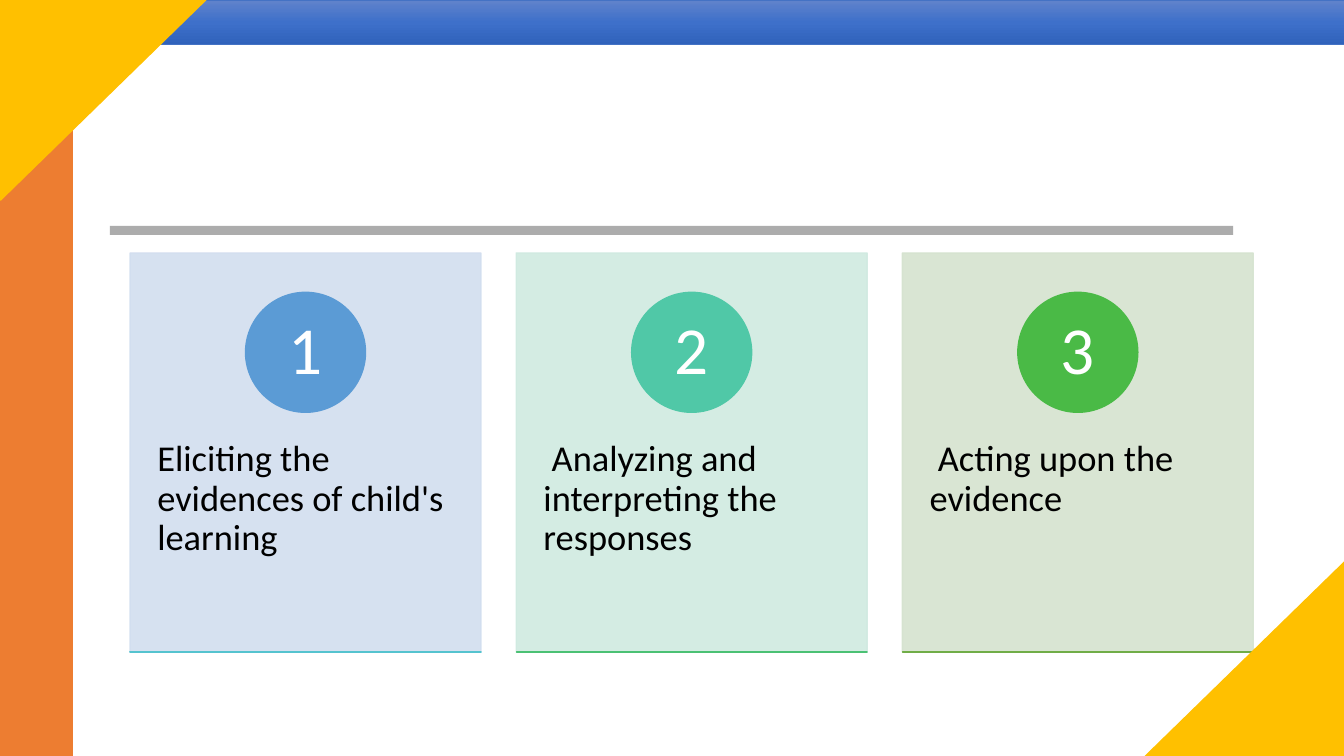
from copy import deepcopy

from pptx import Presentation
from pptx.dml.color import RGBColor
from pptx.enum.shapes import MSO_SHAPE as Shape
from pptx.enum.text import MSO_ANCHOR as Anchor, PP_ALIGN as Align
from pptx.oxml.ns import qn
from pptx.oxml.xmlchemy import OxmlElement
from pptx.util import Inches, Pt

WIDTH, HEIGHT = 13.33, 7.5
FONT = "Calibri"
GOLD, ORANGE = "FFC000", "ED7D31"
BAR_HEIGHT, STRIPE_WIDTH = 0.44, 0.72
CARD_WIDTH, CARD_HEIGHT, CARD_STEP = 3.48, 3.96, 3.83
CIRCLE_SIZE, NUMBER_SIZE = 1.19, 0.84

# Text, card colour, circle colour, base line colour
STEPS = [
    ("Eliciting the evidences of child's learning", "D2DEEF", "5B9BD5", "55C3CF"),
    (" Analyzing and interpreting the responses", "D0EAE1", "50C8A7", "4BC174"),
    (" Acting upon the evidence", "D5E3CF", "4ABA46", "70AD47"),
]


def rgb(color):
    return RGBColor.from_string(color)


def add_block(slide, kind, box, color, opacity=100, outlined=True):
    """Add a preset shape whose outline, if any, matches its fill."""
    shape = slide.shapes.add_shape(kind, *map(Inches, box))
    shape.shadow.inherit = False
    shape.fill.solid()
    shape.fill.fore_color.rgb = rgb(color)
    if outlined:
        shape.line.color.rgb = rgb(color)
        shape.line.width = Pt(1)
    else:
        shape.line.fill.background()
    if opacity < 100:
        for color_node in shape._element.spPr.iter(qn("a:srgbClr")):
            alpha = OxmlElement("a:alpha")
            alpha.set("val", str(opacity * 1000))
            color_node.append(alpha)
    return shape


def add_text(slide, box, text, size, color, insets, align, anchor):
    frame = slide.shapes.add_textbox(*map(Inches, box)).text_frame
    frame.word_wrap = True
    frame.vertical_anchor = anchor
    side, end = map(Inches, insets)
    frame.margin_left = frame.margin_right = side
    frame.margin_top = frame.margin_bottom = end
    frame.text = text
    para = frame.paragraphs[0]
    para.alignment = align
    para.line_spacing = 0.9
    font = para.runs[0].font
    font.name, font.size = FONT, Pt(size)
    font.color.rgb = rgb(color)


def add_card(slide, left, top, number, step):
    text, card_color, circle_color, base_color = step
    add_block(slide, Shape.RECTANGLE, (left, top, CARD_WIDTH, CARD_HEIGHT),
              card_color, opacity=90)
    add_text(slide, (left, top + 1.5, CARD_WIDTH, 2.37), text, 26, "000000",
             (0.27, 0.36), Align.LEFT, Anchor.TOP)

    circle_left = left + (CARD_WIDTH - CIRCLE_SIZE) / 2
    circle_top = top + 0.39
    add_block(slide, Shape.OVAL,
              (circle_left, circle_top, CIRCLE_SIZE, CIRCLE_SIZE), circle_color)
    inset = (CIRCLE_SIZE - NUMBER_SIZE) / 2
    add_text(slide,
             (circle_left + inset, circle_top + inset, NUMBER_SIZE, NUMBER_SIZE),
             str(number), 48, "FFFFFF", (0.09, 0.01), Align.CENTER, Anchor.MIDDLE)
    add_block(slide, Shape.RECTANGLE,
              (left, top + CARD_HEIGHT, CARD_WIDTH, 0), base_color)


def add_cards(slide, left, top):
    for index, step in enumerate(STEPS):
        add_card(slide, left + index * CARD_STEP, top, index + 1, step)


def add_top_bar(slide, box):
    bar = add_block(slide, Shape.RECTANGLE, box, "4472C4")
    bar.line.width = Pt(0.5)
    bar.fill.gradient()
    bar.fill.gradient_angle = 270
    stop_list = bar._element.spPr.find(qn("a:gradFill")).find(qn("a:gsLst"))
    stop_list.append(deepcopy(stop_list[0]))
    stops = zip(bar.fill.gradient_stops, (0, 0.5, 1), ("6183CB", "3E70CA", "3062BB"))
    for stop, position, color in stops:
        stop.position = position
        stop.color.rgb = rgb(color)


def add_frame(slide):
    """Add the top bar, the side stripe and the two corner triangles."""
    add_top_bar(slide, (0, 0, WIDTH, BAR_HEIGHT))
    add_block(slide, Shape.RECTANGLE,
              (0, BAR_HEIGHT, STRIPE_WIDTH, HEIGHT - BAR_HEIGHT), ORANGE)
    for left, top, rotation in ((0.03, -0.03, 90), (11.33, 5.54, 270)):
        corner = add_block(slide, Shape.RIGHT_TRIANGLE, (left, top, 1.99, 2.04), GOLD)
        corner.rotation = rotation


def main():
    deck = Presentation()
    deck.slide_width, deck.slide_height = Inches(WIDTH), Inches(HEIGHT)
    slide = deck.slides.add_slide(deck.slide_layouts[6])
    add_block(slide, Shape.RECTANGLE, (1.09, 2.24, 11.14, 0.09), "808080",
              opacity=65, outlined=False)
    add_cards(slide, 1.29, 2.51)
    add_frame(slide)
    deck.save("out.pptx")


if __name__ == "__main__":
    main()
